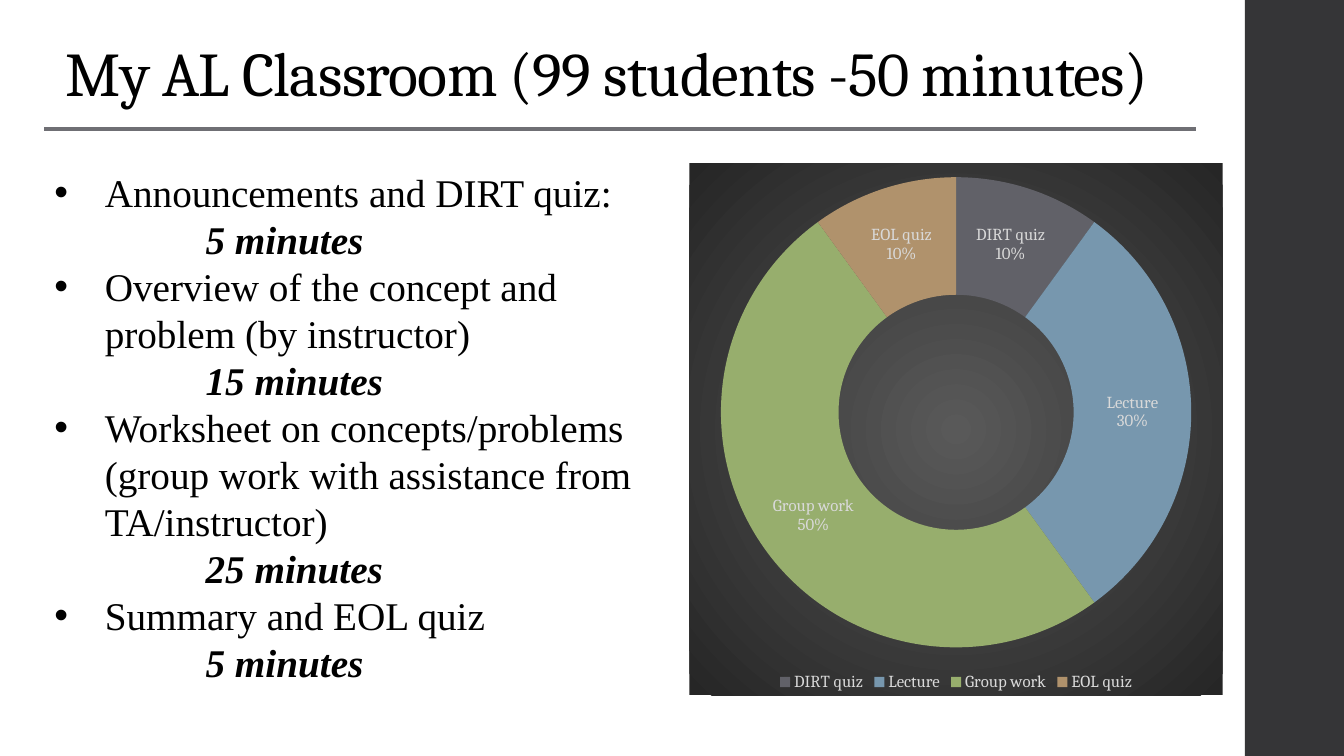
from lxml.etree import SubElement
from pptx import Presentation
from pptx.chart.data import CategoryChartData
from pptx.dml.color import RGBColor
from pptx.enum.chart import XL_CHART_TYPE as ChartType, XL_LEGEND_POSITION as LegendPosition
from pptx.enum.shapes import MSO_CONNECTOR as Connector, MSO_SHAPE as Shape
from pptx.enum.text import MSO_ANCHOR as Anchor, MSO_AUTO_SIZE as AutoSize, PP_ALIGN as Align
from pptx.oxml import parse_xml
from pptx.oxml.ns import nsdecls, qn
from pptx.util import Inches, Pt

BLACK = RGBColor(0x00, 0x00, 0x00)
CHARCOAL = RGBColor(0x35, 0x35, 0x37)
RULE_GREY = RGBColor(0x6F, 0x6F, 0x74)
LABEL_GREY = RGBColor(0xD9, 0xD9, 0xD9)
PANEL_CENTER = RGBColor(0x59, 0x59, 0x59)
PANEL_EDGE = RGBColor(0x26, 0x26, 0x26)
SLATE = RGBColor(0x61, 0x61, 0x68)
BLUE = RGBColor(0x77, 0x97, 0xAE)
GREEN = RGBColor(0x97, 0xAE, 0x6D)
TAN = RGBColor(0xB0, 0x92, 0x6C)

AGENDA = [
    ("Announcements and DIRT quiz:", "5 minutes"),
    ("Overview of the concept and problem (by instructor)", "15 minutes"),
    ("Worksheet on concepts/problems (group work with assistance from TA/instructor)",
     "25 minutes"),
    ("Summary and EOL quiz", "5 minutes"),
]
CLASS_SHARES = [
    ("DIRT quiz", 10, SLATE),
    ("Lecture", 30, BLUE),
    ("Group work", 50, GREEN),
    ("EOL quiz", 10, TAN),
]


def apply(target, values):
    """Set every attribute named in a dict of format values."""
    for name, value in values.items():
        setattr(target, name, value)


class SlideBuilder:
    """Hold the style and the slide; positions are percent of the slide's size."""

    title_font = {"name": "Cambria", "size": Pt(44.4)}
    body_font = {"name": "Times New Roman", "size": Pt(28)}
    duration_font = {"bold": True, "italic": True}
    chart_font = {"name": "Cambria", "size": Pt(12)}

    def __init__(self, presentation):
        """Add a title and content slide."""
        self.width = presentation.slide_width
        self.height = presentation.slide_height
        self.slide = presentation.slides.add_slide(presentation.slide_layouts[1])

    def box(self, left, top, width, height):
        """Turn percent shares into lengths."""
        return (int(self.width * left / 100), int(self.height * top / 100),
                int(self.width * width / 100), int(self.height * height / 100))

    def place(self, shape, *shares):
        """Move a placeholder to its share of the slide."""
        apply(shape, dict(zip(("left", "top", "width", "height"), self.box(*shares))))

    def style_font(self, font, values, color):
        """Format a font and give it a colour."""
        apply(font, values)
        font.color.rgb = color

    def bar(self, color, *shares):
        """Draw a plain filled rectangle."""
        shape = self.slide.shapes.add_shape(Shape.RECTANGLE, *self.box(*shares))
        shape.shadow.inherit = False
        shape.fill.solid()
        shape.fill.fore_color.rgb = color
        shape.line.fill.background()

    def rule(self, color, left, right, top):
        """Draw a horizontal line."""
        start, level, end, _ = self.box(left, top, right, 0)
        line = self.slide.shapes.add_connector(Connector.STRAIGHT, start, level, end, level)
        line.line.color.rgb = color
        line.line.width = Pt(2.25)
        SubElement(line._element.spPr, qn("a:effectLst"))

    def title(self, text, *shares):
        """Fill the title placeholder."""
        shape = self.slide.shapes.title
        self.place(shape, *shares)
        apply(shape.text_frame, {"text": text, "word_wrap": True,
                                 "auto_size": AutoSize.NONE,
                                 "vertical_anchor": Anchor.MIDDLE})
        paragraph = shape.text_frame.paragraphs[0]
        apply(paragraph, {"alignment": Align.LEFT, "line_spacing": 0.9})
        run = paragraph.runs[0]
        self.style_font(run.font, self.title_font, BLACK)
        run.font._element.set("spc", "-50")

    def agenda(self, entries, *shares):
        """Fill the body placeholder with activities and their durations."""
        shape = self.slide.placeholders[1]
        self.place(shape, *shares)
        frame = shape.text_frame
        lines = [line for entry in entries for line in entry]
        apply(frame, {"text": "\n".join(lines), "word_wrap": True,
                      "auto_size": AutoSize.SHAPE_TO_FIT_TEXT,
                      "vertical_anchor": Anchor.TOP})
        for index, paragraph in enumerate(frame.paragraphs):
            apply(paragraph, {"alignment": Align.LEFT, "line_spacing": Pt(33.6),
                              "space_before": Pt(0), "space_after": Pt(0)})
            font = paragraph.runs[0].font
            self.style_font(font, self.body_font, BLACK)
            if index % 2:
                apply(font, self.duration_font)
                self.indent(paragraph, 1.5, 0, "buNone")
            else:
                self.indent(paragraph, 0.5, -0.5, "buChar", char="•")

    def indent(self, paragraph, margin, first, bullet, **details):
        """Set a paragraph's margin, first line indent and bullet."""
        properties = paragraph._p.get_or_add_pPr()
        properties.set("marL", str(Inches(margin)))
        properties.set("indent", str(Inches(first)))
        SubElement(properties, qn(f"a:{bullet}"), **details)

    def doughnut(self, shares_of_class, *shares):
        """Add a doughnut chart on a radial gradient panel."""
        names, values, colors = zip(*shares_of_class)
        data = CategoryChartData()
        data.categories = names
        data.add_series("Series 1", values)
        chart = self.slide.shapes.add_chart(
            ChartType.DOUGHNUT, *self.box(*shares), data).chart
        apply(chart, {"has_title": False, "has_legend": True})
        self.style_font(chart.font, {"name": "Cambria", "size": Pt(10)}, BLACK)
        apply(chart.legend, {"position": LegendPosition.BOTTOM, "include_in_layout": False})
        self.style_font(chart.legend.font, self.chart_font, LABEL_GREY)
        plot = chart.plots[0]
        plot.vary_by_categories = True
        plot._element.find(qn("c:holeSize")).set("val", "75")
        series = plot.series[0]
        for index, color in enumerate(colors):
            fill = series.points[index].format.fill
            fill.solid()
            fill.fore_color.rgb = color
        labels = series.data_labels
        apply(labels, {"show_value": False, "show_percentage": True,
                       "show_category_name": True})
        self.style_font(labels.font, self.chart_font, LABEL_GREY)
        labels._element.find(qn("c:showBubbleSize")).addnext(
            parse_xml(f"<c:separator {nsdecls('c')}>\n</c:separator>"))
        self.chart_panel(chart)

    def chart_panel(self, chart):
        """Give the chart area its radial gradient."""
        chart._chartSpace.find(qn("c:chart")).addnext(parse_xml(
            f'<c:spPr {nsdecls("c", "a")}><a:gradFill><a:gsLst>'
            f'<a:gs pos="0"><a:srgbClr val="{PANEL_CENTER}"/></a:gs>'
            f'<a:gs pos="100000"><a:srgbClr val="{PANEL_EDGE}"/></a:gs></a:gsLst>'
            '<a:path path="circle">'
            '<a:fillToRect l="50000" t="50000" r="50000" b="50000"/></a:path>'
            '</a:gradFill><a:ln><a:noFill/></a:ln></c:spPr>'))


def main():
    """Build and save the classroom slide."""
    presentation = Presentation()
    apply(presentation, {"slide_width": Inches(13.33), "slide_height": Inches(7.5)})
    builder = SlideBuilder(presentation)
    builder.bar(CHARCOAL, 92.63, 0, 7.37, 100)
    builder.title("My AL Classroom (99 students -50 minutes)", 4.13, 4.13, 86.25, 11.87)
    builder.rule(RULE_GREY, 3.3, 88.97, 17.07)
    builder.agenda(AGENDA, 3.3, 21.6, 48, 70.4)
    builder.doughnut(CLASS_SHARES, 51.3, 21.6, 39.68, 70.4)
    presentation.save("out.pptx")


if __name__ == "__main__":
    main()
